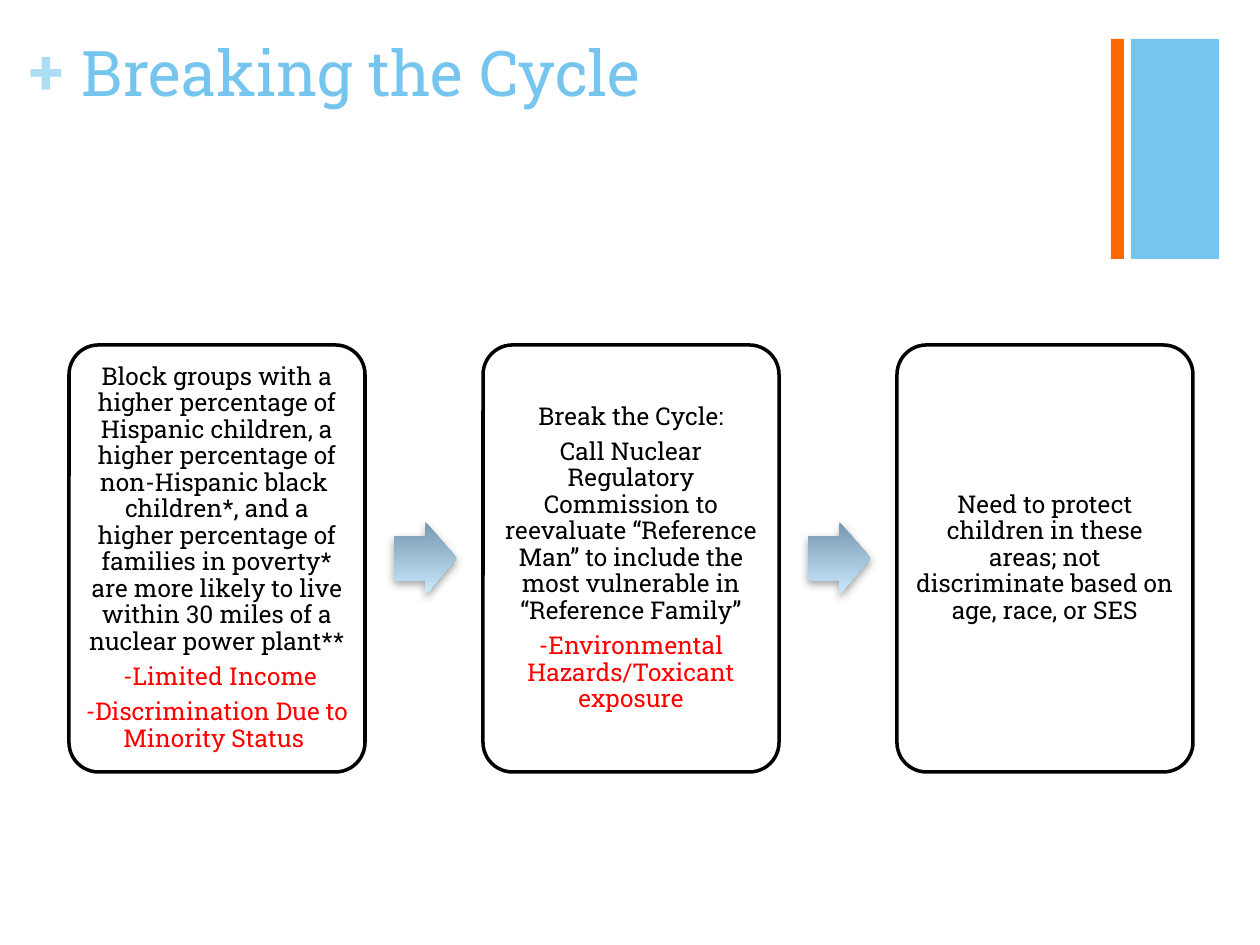
from lxml import etree
from pptx import Presentation
from pptx.dml.color import RGBColor
from pptx.enum.shapes import MSO_SHAPE
from pptx.enum.text import MSO_ANCHOR, PP_ALIGN
from pptx.oxml.ns import qn
from pptx.util import Emu, Pt

RECT, ROUND, ARROW = MSO_SHAPE.RECTANGLE, MSO_SHAPE.ROUNDED_RECTANGLE, MSO_SHAPE.RIGHT_ARROW
TOP, MIDDLE = MSO_ANCHOR.TOP, MSO_ANCHOR.MIDDLE
LEFT, CENTER = PP_ALIGN.LEFT, PP_ALIGN.CENTER

SCALE = 914400 / 126  # EMU in one px
FONT = "Roboto Slab"
BLUE, PALE, ORANGE = "76C5EF", "ADDCF5", "FF6700"
BLACK, WHITE, RED, GRAY = "000000", "FFFFFF", "FF0000", "808080"
DARK, LIGHT = "7597AE", "CDEAFF"


def px(n):
    return Emu(round(n * SCALE))


def color(text):
    return RGBColor.from_string(text)


class Deck:
    def __init__(self, wide, high):
        self.file = Presentation()
        self.file.slide_width, self.file.slide_height = px(wide), px(high)
        self.slide = self.file.slides.add_slide(self.file.slide_layouts[6])

    def shape(self, kind, box, fill=None):
        item = self.slide.shapes.add_shape(kind, *map(px, box))
        item.shadow.inherit = False
        item.line.fill.background()
        if fill:
            item.fill.solid()
            item.fill.fore_color.rgb = color(fill)
        return item

    def frame(self, item, anchor, side, edge):
        frame = item.text_frame
        frame.word_wrap = True
        frame.vertical_anchor = anchor
        frame.margin_left = frame.margin_right = px(side)
        frame.margin_top = frame.margin_bottom = px(edge)
        return frame

    def run(self, para, text, size, tint, bold=False):
        run = para.add_run()
        run.text = text
        font = run.font
        font.name, font.size, font.bold = FONT, Pt(size), bold
        font.color.rgb = color(tint)

    def label(self, box, text, size, tint, side=0, edge=0, bold=False):
        item = self.slide.shapes.add_textbox(*map(px, box))
        para = self.frame(item, TOP, side, edge).paragraphs[0]
        para.alignment = LEFT
        self.run(para, text, size, tint, bold)

    def card(self, box, lines):
        item = self.shape(ROUND, box, WHITE)
        item.adjustments[0] = 0.1
        item.line.color.rgb = color(BLACK)
        item.line.width = Pt(2)
        frame = self.frame(item, MIDDLE, 8, 8)
        for i, (text, tint) in enumerate(lines):
            para = frame.add_paragraph() if i else frame.paragraphs[0]
            para.alignment = CENTER
            para.line_spacing = 0.9
            para.space_after = Pt(5)
            self.run(para, text, 14, tint)

    def arrow(self, box):
        item = self.shape(ARROW, box)
        item.adjustments[0], item.adjustments[1] = 0.6, 0.5
        item.fill.gradient()
        item.fill.gradient_angle = 270
        for stop, tint in zip(item.fill.gradient_stops, (DARK, LIGHT)):
            stop.color.rgb = color(tint)
        # Soft shadow below
        glow = item._element.spPr.find(qn("a:effectLst"))
        cast = etree.SubElement(glow, qn("a:outerShdw"), blurRad=str(Pt(5)),
                                dist=str(Pt(2)), dir="5400000", rotWithShape="0")
        tone = etree.SubElement(cast, qn("a:srgbClr"), val=GRAY)
        etree.SubElement(tone, qn("a:alpha"), val="75000")


CARDS = [
    [("Block groups with a higher percentage of Hispanic children, a higher "
      "percentage of non-Hispanic black  children*, and a higher percentage of "
      "families in poverty* are more likely to live within 30 miles of a "
      "nuclear power plant**", BLACK),
     (" -Limited Income", RED),
     ("-Discrimination Due to Minority Status ", RED)],
    [("Break the Cycle:", BLACK),
     ("Call Nuclear Regulatory Commission to reevaluate “Reference Man” to "
      "include the most vulnerable in “Reference Family”", BLACK),
     ("-Environmental Hazards/Toxicant exposure", RED)],
    [("Need to protect children in these areas; not discriminate based on "
      "age, race, or SES", BLACK)],
]
START, STEP = 69, 414


def main():
    deck = Deck(1260, 945)

    # Corner bars
    deck.shape(RECT, (1131, 39, 88, 220), BLUE)
    deck.shape(RECT, (1111, 39, 13, 220), ORANGE)

    # Title with plus sign
    deck.label((30, 32, 37, 77), "+", 36, PALE, bold=True)
    deck.label((69, 28, 1041, 154), "Breaking the Cycle", 36, BLUE, 13, 6)

    # Cards, with an arrow before each but the first
    for i, lines in enumerate(CARDS):
        left = START + i * STEP
        if i:
            deck.arrow((left - 89, 522, 63, 73))
        deck.card((left, 345, 296, 427), lines)

    deck.file.save("out.pptx")


if __name__ == "__main__":
    main()
